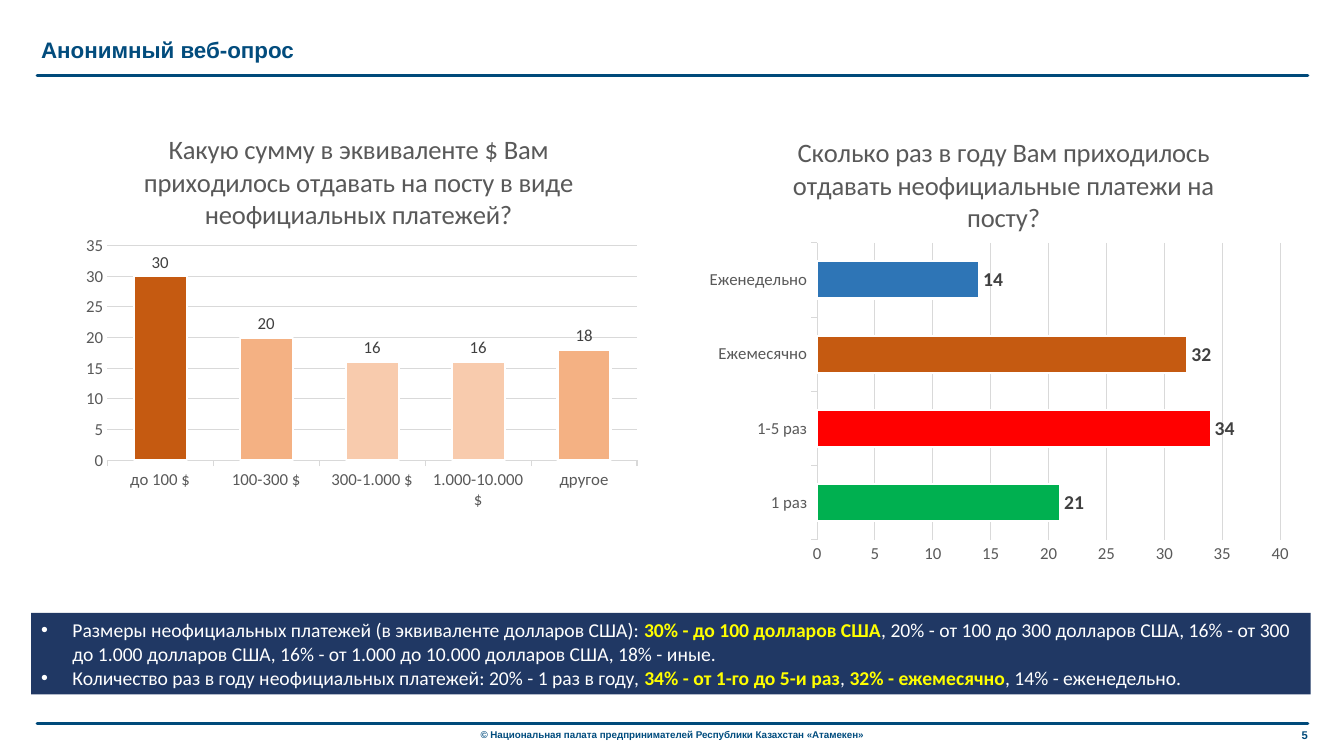
"""Build the anonymous survey slide: two bar charts and a summary band."""
from lxml import etree
from pptx import Presentation
from pptx.chart.data import CategoryChartData
from pptx.dml.color import RGBColor
from pptx.enum.chart import XL_CHART_TYPE, XL_LABEL_POSITION, XL_TICK_MARK
from pptx.enum.shapes import MSO_CONNECTOR, MSO_SHAPE
from pptx.enum.text import MSO_ANCHOR, PP_ALIGN
from pptx.oxml import parse_xml
from pptx.oxml.ns import nsdecls, qn
from pptx.util import Inches, Pt

COLUMNS, BARS = XL_CHART_TYPE.COLUMN_CLUSTERED, XL_CHART_TYPE.BAR_CLUSTERED
OUTSIDE_END = XL_LABEL_POSITION.OUTSIDE_END
TICK_OUT, TICK_NONE = XL_TICK_MARK.OUTSIDE, XL_TICK_MARK.NONE
LEFT, CENTER, RIGHT = PP_ALIGN.LEFT, PP_ALIGN.CENTER, PP_ALIGN.RIGHT
TOP, MIDDLE = MSO_ANCHOR.TOP, MSO_ANCHOR.MIDDLE
RULE_BLUE = RGBColor(0x00, 0x4A, 0x7A)
FOOTER_BLUE = RGBColor(0x00, 0x4C, 0x7E)
TITLE_BLUE = RGBColor(0x02, 0x4C, 0x7D)
NAVY = RGBColor(0x20, 0x38, 0x64)
WHITE = RGBColor(0xFF, 0xFF, 0xFF)
YELLOW = RGBColor(0xFF, 0xFF, 0x00)
AXIS_GRAY = RGBColor(0x59, 0x59, 0x59)
LABEL_GRAY = RGBColor(0x40, 0x40, 0x40)
GRID_GRAY = RGBColor(0xD9, 0xD9, 0xD9)
RUST = RGBColor(0xC5, 0x5A, 0x11)
ORANGE = RGBColor(0xF4, 0xB1, 0x83)
PEACH = RGBColor(0xF8, 0xCB, 0xAD)
GREEN = RGBColor(0x00, 0xB0, 0x50)
RED = RGBColor(0xFF, 0x00, 0x00)
BLUE = RGBColor(0x2E, 0x75, 0xB6)


def set_font(font, name, size, color, bold=False):
    """Apply one text format to a font."""
    for attribute, value in {"name": name, "size": Pt(size), "bold": bold}.items():
        setattr(font, attribute, value)
    font.color.rgb = color


def set_layout(element, index, shares, target=""):
    """Place a chart part by shares of the chart's size."""
    for layout in element.findall(qn("c:layout")):
        element.remove(layout)
    modes = "".join(f'<c:{key}Mode val="edge"/>' for key in ("x", "y"))
    sizes = "".join(f'<c:{key} val="{share}"/>' for key, share in zip("xywh", shares))
    element.insert(index, parse_xml(
        f'<c:layout {nsdecls("c")}><c:manualLayout>{target}{modes}{sizes}'
        "</c:manualLayout></c:layout>"))


presentation = Presentation()
presentation.slide_width, presentation.slide_height = Inches(13.33), Inches(7.5)
slide = presentation.slides.add_slide(presentation.slide_layouts[6])

for rule_y in (0.75, 7.18):
    rule = slide.shapes.add_connector(
        MSO_CONNECTOR.STRAIGHT, Inches(0.37), Inches(rule_y), Inches(12.97), Inches(rule_y))
    rule.line.color.rgb = RULE_BLUE
    rule.line.width = Pt(2.5)
    rule.line._get_or_add_ln().set("cap", "rnd")
    etree.SubElement(rule._element.spPr, qn("a:effectLst"))

captions = [
    ("5", (12.36, 7.18, 0.71, 0.23), 8, RULE_BLUE, RIGHT),
    ("© Национальная палата предпринимателей Республики Казахстан «Атамекен»",
     (4.32, 7.18, 4.69, 0.22), 7, FOOTER_BLUE, CENTER),
    ("Анонимный веб-опрос", (0.31, 0.31, 8.77, 0.37), 16, TITLE_BLUE, LEFT),
]
for text, place, size, color, alignment in captions:
    caption = slide.shapes.add_textbox(*map(Inches, place))
    caption.text_frame.word_wrap = True
    caption.text_frame.vertical_anchor = TOP
    paragraph = caption.text_frame.paragraphs[0]
    paragraph.alignment = alignment
    run = paragraph.add_run()
    run.text = text
    set_font(run.font, "Arial", size, color, True)

summary = slide.shapes.add_shape(
    MSO_SHAPE.RECTANGLE, Inches(0.31), Inches(6.08), Inches(12.69), Inches(0.81))
summary.shadow.inherit = False
summary.fill.solid()
summary.fill.fore_color.rgb = NAVY
summary.line.fill.background()
summary.text_frame.word_wrap = True
summary.text_frame.vertical_anchor = MIDDLE
findings = [
    [("Размеры неофициальных платежей (в эквиваленте долларов США): ", False),
     ("30% - до 100 долларов США", True),
     (", 20% - от 100 до 300 долларов США, 16% - от 300 до 1.000 долларов США, "
      "16% - от 1.000 до 10.000 долларов США, 18% - иные.", False)],
    [("Количество раз в году неофициальных платежей: 20% - 1 раз в году, ", False),
     ("34% - от 1-го до 5-и раз", True), (", ", False),
     ("32% - ежемесячно", True), (", 14% - еженедельно.", False)],
]
for number, finding in enumerate(findings):
    frame = summary.text_frame
    paragraph = frame.add_paragraph() if number else frame.paragraphs[0]
    paragraph.alignment = LEFT
    properties = paragraph._p.get_or_add_pPr()
    properties.set("marL", str(Inches(0.31)))
    properties.set("indent", str(-Inches(0.31)))
    etree.SubElement(properties, qn("a:buFont")).set("typeface", "Arial")
    etree.SubElement(properties, qn("a:buChar")).set("char", "•")
    for text, highlighted in finding:
        run = paragraph.add_run()
        run.text = text
        set_font(run.font, "Calibri", 14, YELLOW if highlighted else WHITE, highlighted)

charts = [
    {"type": COLUMNS, "place": (0.69, 1.05, 5.75, 4.08), "maximum": 35,
     "title": "Какую сумму в эквиваленте $ Вам приходилось отдавать на посту "
              "в виде неофициальных платежей?",
     "title_at": (0.12, 0.05), "plot_at": (0.065, 0.34, 0.914, 0.522),
     "label_size": 12, "label_bold": False,
     "bars": [("до 100 $", 30, RUST), ("100-300 $", 20, ORANGE), ("300-1.000 $", 16, PEACH),
              ("1.000-10.000 $", 16, PEACH), ("другое", 18, ORANGE)]},
    {"type": BARS, "place": (6.92, 1.05, 5.98, 4.69), "maximum": 40,
     "title": "Сколько раз в году Вам приходилось отдавать неофициальные платежи на посту?",
     "title_at": (0.15, 0.05), "plot_at": (0.198, 0.29, 0.768, 0.628),
     "label_size": 14, "label_bold": True,
     "bars": [("1 раз", 21, GREEN), ("1-5 раз", 34, RED),
              ("Ежемесячно", 32, RUST), ("Еженедельно", 14, BLUE)]},
]
for design in charts:
    categories, values, colors = zip(*design["bars"])
    data = CategoryChartData()
    data.categories = categories
    data.add_series("Series 1", values)
    chart = slide.shapes.add_chart(design["type"], *map(Inches, design["place"]), data).chart
    set_font(chart.font, "Calibri", 12, AXIS_GRAY)
    chart.has_legend = False
    chart.has_title = True
    paragraph = chart.chart_title.text_frame.paragraphs[0]
    run = paragraph.add_run()
    run.text = design["title"]
    set_font(run.font, "Calibri", 19, AXIS_GRAY)
    chart.chart_title.include_in_layout = False
    set_layout(chart.chart_title._element, 1, design["title_at"])
    set_layout(chart._chartSpace.chart.plotArea, 0, design["plot_at"],
               '<c:layoutTarget val="inner"/>')

    category_axis, value_axis = chart.category_axis, chart.value_axis
    for axis, tick in ((category_axis, TICK_OUT), (value_axis, TICK_NONE)):
        axis.major_tick_mark = tick
        axis.minor_tick_mark = TICK_NONE
        set_font(axis.tick_labels.font, "Calibri", 12, AXIS_GRAY)
    value_axis.has_major_gridlines = True
    for line in (category_axis.format.line, value_axis.major_gridlines.format.line):
        line.color.rgb = GRID_GRAY
        line.width = Pt(0.75)
    value_axis.format.line.fill.background()
    scale = {"minimum_scale": 0, "maximum_scale": design["maximum"], "major_unit": 5}
    for attribute, value in scale.items():
        setattr(value_axis, attribute, value)

    plot = chart.plots[0]
    plot.gap_width = 100
    plot.vary_by_categories = False
    plot.has_data_labels = True
    labels = plot.data_labels
    labels.show_value = True
    labels.position = OUTSIDE_END
    set_font(labels.font, "Calibri", design["label_size"], LABEL_GRAY, design["label_bold"])
    for index, color in enumerate(colors):
        bar = plot.series[0].points[index].format
        bar.fill.solid()
        bar.fill.fore_color.rgb = color
        bar.line.color.rgb = WHITE
        bar.line.width = Pt(1.5)

presentation.save("out.pptx")
